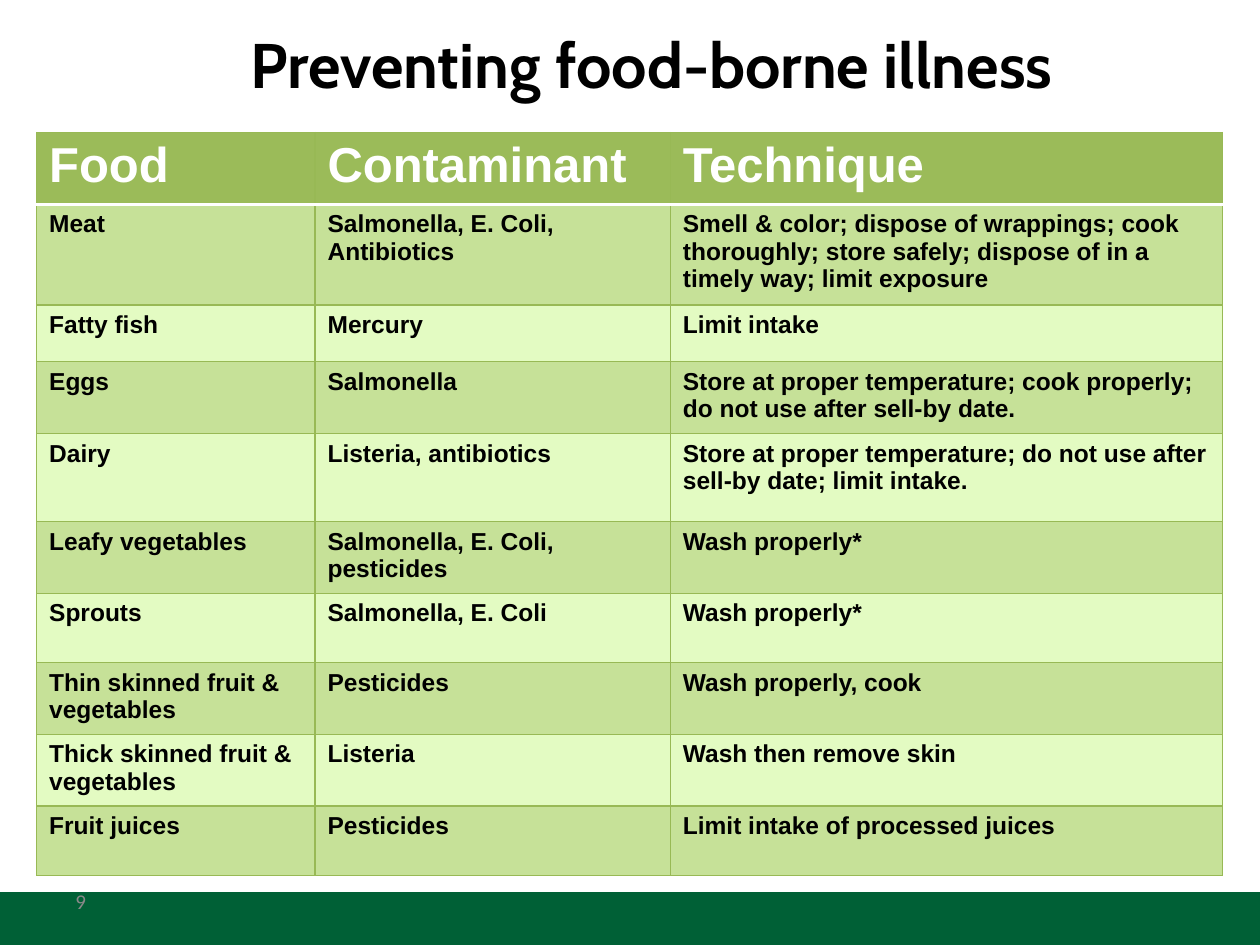
from dataclasses import dataclass

from lxml import etree
from pptx import Presentation
from pptx.dml.color import RGBColor
from pptx.enum.shapes import MSO_SHAPE
from pptx.enum.text import MSO_ANCHOR, MSO_AUTO_SIZE, PP_ALIGN
from pptx.oxml.ns import qn
from pptx.util import Inches, Pt

RECT = MSO_SHAPE.RECTANGLE
MIDDLE = MSO_ANCHOR.MIDDLE
NO_FIT = MSO_AUTO_SIZE.NONE
LEFT, CENTER = PP_ALIGN.LEFT, PP_ALIGN.CENTER
TITLE_ONLY = 5


@dataclass(frozen=True)
class Theme:
    title_font: str = "Cabin"
    table_font: str = "Arial"
    number_font: str = "Calibri"
    title_size: int = 36
    header_size: int = 28
    body_size: int = 14
    number_size: int = 12
    ink: str = "000000"
    white: str = "FFFFFF"
    bar: str = "006036"
    number: str = "898989"
    header: str = "9BBB59"
    band: str = "C6E198"
    plain: str = "E3FBC2"
    border: str = "98B955"


COLUMNS = [2.21, 2.82, 4.38]
ROW_HEIGHTS = [0.57, 0.8, 0.45, 0.57, 0.7, 0.55, 0.55, 0.57, 0.57, 0.55]
FOODS = [
    ("Food", "Contaminant", "Technique"),
    ("Meat", "Salmonella, E. Coli, Antibiotics",
     "Smell & color; dispose of wrappings; cook thoroughly; store safely; "
     "dispose of in a timely way; limit exposure"),
    ("Fatty fish", "Mercury", "Limit intake"),
    ("Eggs", "Salmonella",
     "Store at proper temperature; cook properly; do not use after sell-by date."),
    ("Dairy", "Listeria, antibiotics",
     "Store at proper temperature; do not use after sell-by date; limit intake."),
    ("Leafy vegetables", "Salmonella, E. Coli, pesticides", "Wash properly*"),
    ("Sprouts", "Salmonella, E. Coli", "Wash properly*"),
    ("Thin skinned fruit & vegetables", "Pesticides", "Wash properly, cook"),
    ("Thick skinned fruit & vegetables", "Listeria", "Wash then remove skin"),
    ("Fruit juices", "Pesticides", "Limit intake of processed juices"),
]


def write(tf, text, *, font, size, color, bold=False, align=LEFT):
    """Put one formatted paragraph in a text frame."""
    tf.word_wrap = True
    p = tf.paragraphs[0]
    p.alignment = align
    r = p.add_run()
    r.text = text
    r.font.name, r.font.size, r.font.bold = font, Pt(size), bold
    r.font.color.rgb = RGBColor.from_string(color)


def set_borders(cell, borders):
    """Set cell borders from (side, colour, points), in L, R, T, B order."""
    tc_pr = cell._tc.get_or_add_tcPr()
    for i, (side, color, width) in enumerate(borders):
        ln = etree.Element(qn(f"a:ln{side}"), w=str(Pt(width)))
        fill = etree.SubElement(ln, qn("a:solidFill"))
        etree.SubElement(fill, qn("a:srgbClr"), val=color)
        tc_pr.insert(i, ln)


class SlideBuilder:
    def __init__(self, slide, theme):
        self.s = slide
        self.theme = theme

    def bar(self, x, y, w, h):
        sp = self.s.shapes.add_shape(RECT, Inches(x), Inches(y), Inches(w), Inches(h))
        sp.shadow.inherit = False
        sp.fill.solid()
        sp.fill.fore_color.rgb = RGBColor.from_string(self.theme.bar)
        sp.line.fill.background()

    def title(self, text, x, y, w, h):
        t = self.theme
        sp = self.s.shapes.title
        sp.left, sp.top, sp.width, sp.height = map(Inches, (x, y, w, h))
        tf = sp.text_frame
        tf.auto_size, tf.vertical_anchor = NO_FIT, MIDDLE
        write(tf, text, font=t.title_font, size=t.title_size, color=t.ink,
              bold=True, align=CENTER)

    def page_number(self, text, x, y, w, h):
        t = self.theme
        sp = self.s.shapes.add_textbox(Inches(x), Inches(y), Inches(w), Inches(h))
        sp.text_frame.vertical_anchor = MIDDLE
        write(sp.text_frame, text, font=t.number_font, size=t.number_size,
              color=t.number)

    def table(self, rows, x, y, widths, heights):
        frame = self.s.shapes.add_table(
            len(rows), len(widths), Inches(x), Inches(y),
            Inches(sum(widths)), Inches(sum(heights)))
        table = frame.table
        for column, width in zip(table.columns, widths):
            column.width = Inches(width)
        for row, height in zip(table.rows, heights):
            row.height = Inches(height)
        for i, texts in enumerate(rows):
            for j, text in enumerate(texts):
                self.cell(table.cell(i, j), text, i)

    def cell(self, cell, text, row):
        t = self.theme
        header = row == 0
        fill = t.header if header else (t.band if row % 2 else t.plain)
        cell.fill.solid()
        cell.fill.fore_color.rgb = RGBColor.from_string(fill)
        thin, rule = (t.border, 0.75), (t.white, 2)
        set_borders(cell, [
            ("L", *thin), ("R", *thin),
            ("T", *(rule if row == 1 else thin)),
            ("B", *(rule if header else thin))])
        write(cell.text_frame, text, font=t.table_font, bold=True,
              size=t.header_size if header else t.body_size,
              color=t.white if header else t.ink)


def main():
    prs = Presentation()
    prs.slide_width, prs.slide_height = Inches(10), Inches(7.5)
    slide = prs.slides.add_slide(prs.slide_layouts[TITLE_ONLY])
    builder = SlideBuilder(slide, Theme())

    # Footer bar and page number
    builder.bar(0, 7.08, 10, 0.42)
    builder.page_number("9", 0.5, 6.95, 2.33, 0.4)

    # Title and food safety table
    builder.title("Preventing food-borne illness", 0.67, -0.17, 9, 1.35)
    builder.table(FOODS, 0.29, 1.05, COLUMNS, ROW_HEIGHTS)

    prs.save("out.pptx")


if __name__ == "__main__":
    main()
